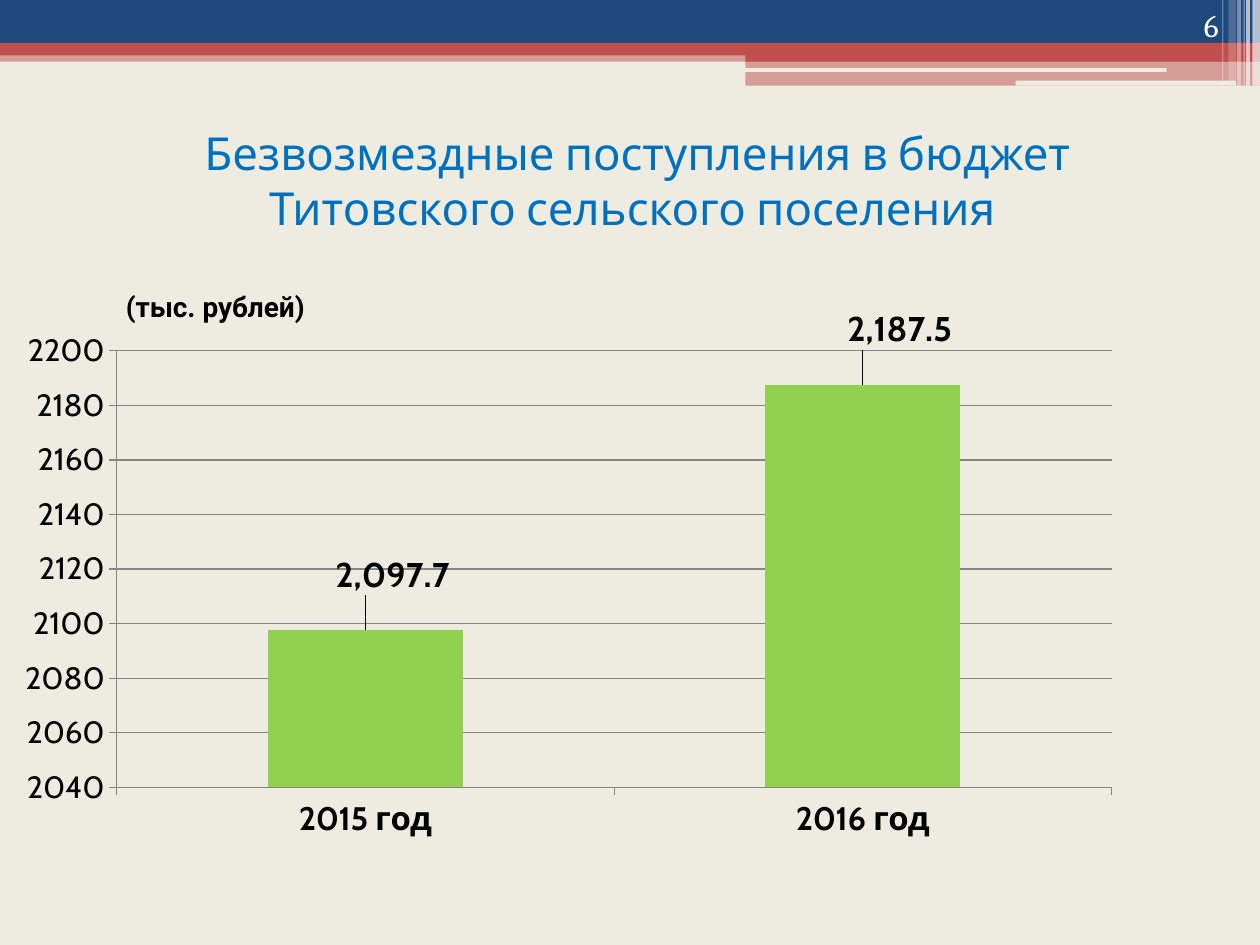
"""Build the slide on grants to the settlement budget with a column chart."""
from lxml import etree
from pptx import Presentation, util as u
from pptx.chart import data as cd
from pptx.dml import color as dc
from pptx.enum import chart as ec, shapes as es, text as et
from pptx.oxml import ns

THEME = {
    "paper": "EEECE1", "navy": "1F497D", "red": "C0504D", "white": "FFFFFF",
    "blue": "0070C0", "black": "000000", "green": "92D050", "grey": "868686",
    "sans": "Cabin", "serif": "Cambria", "plain": "Roboto",
    "title": 26, "unit": 16, "page": 18, "value": 18.1, "cat": 19.1, "label": 20.1,
}
TITLE = "Безвозмездные поступления в бюджет\vТитовского сельского поселения "
UNIT = "(тыс. рублей)"
PAGE = "6"
YEARS = ["2015 год", "2016 год"]
SUMS = [2097.7, 2187.5]
SHIFTS = [(0.025, -0.05), (0.034, -0.05)]
FORMAT = "#,##0.0"
PLOT = {"x": 0.068, "y": 0.045, "w": 0.915, "h": 0.748}

BANDS = [
    (0, 28.8, 720, 6.5, "red", 50),
    (0, 0, 720, 24.5, "navy", 100),
    (0, 24.5, 720, 7.2, "red", 100),
    (426, 28.1, 294, 7.2, "red", 100),
    (426, 34.6, 294, 14.4, "red", 50),
]
SLOTS = [(425.5, 38.9, 241.2, 2.2), (580.3, 46.1, 126, 2.9)]
STRIPES = [
    (715.7, 4.3, 49, 65), (712.1, 2.2, 49, 65), (710.6, 0.7, 49, 60),
    (707, 2.2, 49, 40), (702, 4.3, 46.1, 20), (698.4, 0.7, 46.1, 30),
]


def tint(name):
    return dc.RGBColor.from_string(THEME[name])


def style(font, size, face, ink, bold=False):
    font.size, font.name, font.bold = u.Pt(THEME[size]), THEME[face], bold
    font.color.rgb = tint(ink)


def add_bar(slide, box, ink, alpha=100, kind=es.MSO_SHAPE.RECTANGLE):
    bar = slide.shapes.add_shape(kind, *map(u.Pt, box))
    bar.shadow.inherit = False
    bar.fill.solid()
    bar.fill.fore_color.rgb = tint(ink)
    bar.line.fill.background()
    if alpha < 100:
        fill = bar._element.spPr.find(ns.qn("a:solidFill"))
        etree.SubElement(fill[0], ns.qn("a:alpha"), val=str(alpha * 1000))


def set_text(shape, words, align, anchor, *look):
    frame = shape.text_frame
    frame.word_wrap = True
    frame.vertical_anchor = anchor
    frame.text = words
    line = frame.paragraphs[0]
    line.alignment = align
    for run in line.runs:
        style(run.font, *look)


def add_layout(node, spot, inner=False):
    layout = etree.Element(ns.qn("c:layout"))
    man = etree.SubElement(layout, ns.qn("c:manualLayout"))
    if inner:
        etree.SubElement(man, ns.qn("c:layoutTarget"), val="inner")
        for key in "xy":
            etree.SubElement(man, ns.qn(f"c:{key}Mode"), val="edge")
    for key, val in spot.items():
        etree.SubElement(man, ns.qn(f"c:{key}"), val=str(val))
    for old in node.findall(ns.qn("c:layout")):
        node.remove(old)
    node.insert(0 if inner else 1, layout)
    return layout


def add_chart(slide):
    data = cd.CategoryChartData(number_format=FORMAT)
    data.categories = YEARS
    data.add_series("Series 1", SUMS)
    box = map(u.Pt, (14.4, 176.4, 631.4, 342.7))
    chart = slide.shapes.add_chart(
        ec.XL_CHART_TYPE.COLUMN_CLUSTERED, *box, data).chart
    chart.has_legend = chart.has_title = False
    style(chart.font, "value", "serif", "black")
    add_layout(chart._chartSpace.chart.plotArea, PLOT, True)

    cats, vals = chart.category_axis, chart.value_axis
    style(cats.tick_labels.font, "cat", "sans", "black", True)
    style(vals.tick_labels.font, "value", "sans", "black")
    vals.minimum_scale, vals.maximum_scale, vals.major_unit = 2040, 2200, 20
    vals.tick_labels.number_format = "General"
    vals.tick_labels.number_format_is_linked = False
    vals.has_major_gridlines = True
    for axis in (cats, vals):
        axis.major_tick_mark = ec.XL_TICK_MARK.OUTSIDE
    for item in (cats, vals, vals.major_gridlines):
        item.format.line.color.rgb = tint("grey")
        item.format.line.width = u.Pt(0.75)

    plot = chart.plots[0]
    plot.gap_width = 155
    plot.vary_by_categories = False
    row = plot.series[0]
    row.format.fill.solid()
    row.format.fill.fore_color.rgb = tint("green")
    labels = row.data_labels
    labels.show_value = True
    labels.number_format = FORMAT
    labels.number_format_is_linked = False
    labels.position = ec.XL_LABEL_POSITION.OUTSIDE_END
    style(labels.font, "label", "sans", "black", True)
    for i, _ in enumerate(SUMS):
        label = row.points[i].data_label
        label.position = ec.XL_LABEL_POSITION.OUTSIDE_END
        style(label.font, "label", "sans", "black", True)
    for node, shift in zip(chart._chartSpace.xpath(".//c:dLbl"), SHIFTS):
        layout = add_layout(node, dict(zip("xy", shift)))
        form = etree.Element(
            ns.qn("c:numFmt"), formatCode=FORMAT, sourceLinked="0")
        layout.addnext(form)


def main():
    deck = Presentation()
    deck.slide_width, deck.slide_height = u.Pt(720), u.Pt(540)
    slide = deck.slides.add_slide(deck.slide_layouts[5])
    back = slide.background.fill
    back.solid()
    back.fore_color.rgb = tint("paper")

    for *box, ink, alpha in BANDS:
        add_bar(slide, box, ink, alpha)
    for box in SLOTS:
        add_bar(slide, box, "paper", kind=es.MSO_SHAPE.ROUNDED_RECTANGLE)
    for left, width, height, alpha in STRIPES:
        add_bar(slide, (left, 0, width, height), "white", alpha)

    align, anchor = et.PP_ALIGN, et.MSO_ANCHOR
    title = slide.shapes.title
    title.left, title.top, title.width, title.height = map(
        u.Pt, (8.6, 60.5, 711.4, 84.2))
    set_text(title, TITLE, align.CENTER, anchor.MIDDLE, "title", "sans", "blue")
    unit = slide.shapes.add_textbox(*map(u.Pt, (64.8, 162, 130.3, 26.6)))
    set_text(unit, UNIT, align.LEFT, anchor.TOP, "unit", "plain", "black", True)
    add_chart(slide)
    page = slide.shapes.add_textbox(*map(u.Pt, (643.7, 0, 59.8, 28.8)))
    set_text(page, PAGE, align.RIGHT, anchor.BOTTOM, "page", "serif", "white")
    deck.save("out.pptx")


if __name__ == "__main__":
    main()
